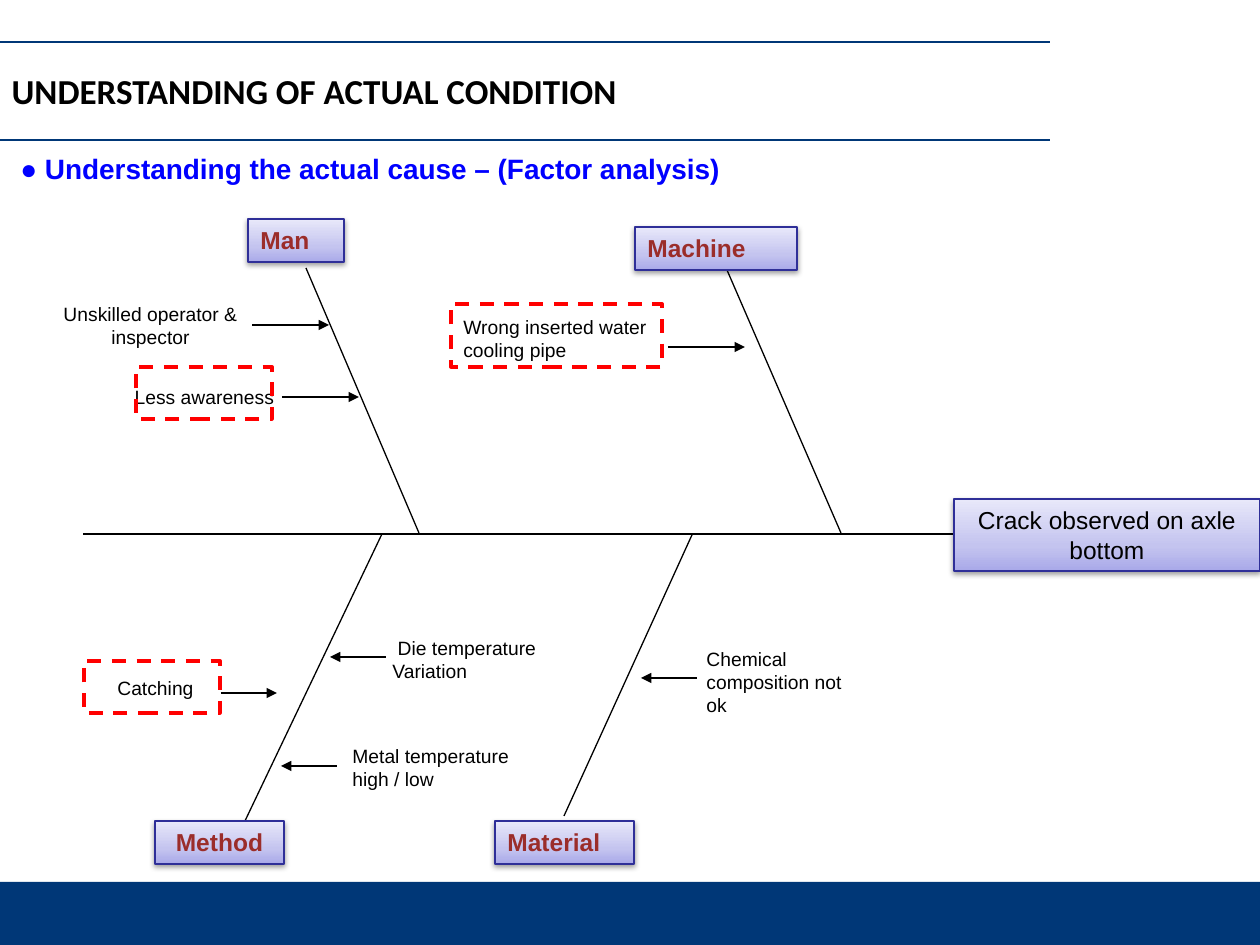
from lxml import etree
from pptx import Presentation, util as u
from pptx.dml.color import RGBColor
from pptx.enum import dml, shapes, text
from pptx.oxml import parse_xml
from pptx.oxml.ns import nsdecls, qn

PX = 914400 / 126
NAVY = RGBColor(0x00, 0x37, 0x77)
BLACK = RGBColor(0x00, 0x00, 0x00)
BLUE = RGBColor(0x00, 0x00, 0xFF)
RED = RGBColor(0xFF, 0x00, 0x00)
MAROON = RGBColor(0x9B, 0x2D, 0x2A)
INDIGO = RGBColor(0x2F, 0x2F, 0x98)
LILACS = (
    (0, RGBColor(0xA9, 0xA9, 0xE9)),
    (35, RGBColor(0xC4, 0xC4, 0xEF)),
    (100, RGBColor(0xE8, 0xE8, 0xFA)),
)
LEFT, CENTER = text.PP_ALIGN.LEFT, text.PP_ALIGN.CENTER
TOP, MIDDLE = text.MSO_ANCHOR.TOP, text.MSO_ANCHOR.MIDDLE

CATEGORIES = (
    ("Man", (248, 219, 96, 43), LEFT),
    ("Method", (155, 821, 129, 43), CENTER),
    ("Material", (495, 821, 139, 43), LEFT),
    ("Machine", (635, 227, 162, 43), LEFT),
)
BONES = (
    (987, 534, 83, 534),
    (727, 270, 841, 533),
    (306, 268, 419, 533),
    (564, 816, 692, 535),
    (245, 821, 382, 534),
)
CAUSES = (
    ("Unskilled operator & inspector", (42, 294, 217, 63), CENTER),
    ("Less awareness", (96, 382, 217, 29), CENTER),
    ("Chemical composition not ok", (694, 649, 185, 66), LEFT),
    ("Metal temperature high / low", (340, 752, 185, 31), LEFT),
    ("Wrong inserted water cooling pipe", (451, 315, 217, 47), LEFT),
    ("Catching", (105, 672, 126, 31), LEFT),
    (" Die temperature Variation", (380, 641, 208, 37), LEFT),
)
ARROWS = (
    (252, 325, 77),
    (282, 397, 77),
    (668, 347, 77),
    (221, 693, 56),
    (386, 657, -56),
    (337, 766, -56),
    (697, 678, -56),
)
KEY_CAUSES = ((84, 661, 136, 52), (136, 367, 136, 52), (451, 304, 211, 63))


def emu(lengths):
    return [u.Emu(round(length * PX)) for length in lengths]


def write(frame, words, size, color, bold=False, align=LEFT, anchor=MIDDLE, font="Arial"):
    frame.word_wrap = True
    frame.auto_size = text.MSO_AUTO_SIZE.NONE
    frame.vertical_anchor = anchor
    paragraph = frame.paragraphs[0]
    paragraph.alignment = align
    run = paragraph.add_run()
    run.text = words
    run.font.name = font
    run.font.size = u.Pt(size)
    run.font.bold = bold
    run.font.color.rgb = color


def add_title(slide, words):
    title = slide.shapes.title
    title.left, title.top, title.width, title.height = emu((-1, 66, 709, 50))
    write(title.text_frame, words, 20, BLACK, bold=True, font="Calibri")


def add_label(slide, words, box, size=11, color=BLACK, bold=False, align=LEFT):
    label = slide.shapes.add_textbox(*emu(box))
    write(label.text_frame, words, size, color, bold, align)


def add_line(slide, ends, color=BLACK, arrow=False):
    line = slide.shapes.add_connector(shapes.MSO_CONNECTOR.STRAIGHT, *emu(ends))
    line.line.color.rgb = color
    line.line.width = u.Pt(0.75)
    properties = line._element.spPr
    if arrow:
        etree.SubElement(properties.find(qn("a:ln")), qn("a:tailEnd"), type="triangle")
    etree.SubElement(properties, qn("a:effectLst"))


def add_rectangle(slide, box):
    rectangle = slide.shapes.add_shape(shapes.MSO_SHAPE.RECTANGLE, *emu(box))
    rectangle.shadow.inherit = False
    return rectangle


def add_band(slide, box):
    band = add_rectangle(slide, box)
    band.fill.solid()
    band.fill.fore_color.rgb = NAVY
    band.line.fill.background()


def add_key_frame(slide, box):
    frame = add_rectangle(slide, box)
    frame.fill.background()
    frame.line.color.rgb = RED
    frame.line.width = u.Pt(2)
    frame.line.dash_style = dml.MSO_LINE.DASH


def add_shaded_box(slide, words, box, color, bold, align):
    shaded = add_rectangle(slide, box)
    shaded.line.color.rgb = INDIGO
    shaded.line.width = u.Pt(0.75)
    stops = "".join(
        f'<a:gs pos="{position * 1000}"><a:srgbClr val="{lilac}"/></a:gs>'
        for position, lilac in LILACS
    )
    properties = shaded._element.spPr
    properties.find(qn("a:prstGeom")).addnext(parse_xml(
        f'<a:gradFill {nsdecls("a")} rotWithShape="1"><a:gsLst>{stops}</a:gsLst>'
        '<a:lin ang="16200000" scaled="0"/></a:gradFill>'
    ))
    properties.find(qn("a:effectLst")).append(parse_xml(
        f'<a:outerShdw {nsdecls("a")} blurRad="40000" dist="20000" dir="5400000" '
        'rotWithShape="0"><a:srgbClr val="000000"><a:alpha val="38000"/></a:srgbClr>'
        '</a:outerShdw>'
    ))
    write(shaded.text_frame, words, 14, color, bold, align, TOP)
    shaded.text_frame.auto_size = text.MSO_AUTO_SIZE.SHAPE_TO_FIT_TEXT


def main():
    deck = Presentation()
    deck.slide_width, deck.slide_height = emu((1260, 945))
    slide = deck.slides.add_slide(deck.slide_layouts[5])

    add_band(slide, (0, 882, 1260, 63))
    for rule_y in (42, 140):
        add_line(slide, (0, rule_y, 1050, rule_y), NAVY)
    add_title(slide, "UNDERSTANDING OF ACTUAL CONDITION")
    add_label(slide, "● Understanding the actual cause – (Factor analysis)",
              (8, 149, 811, 39), 16, BLUE, bold=True)

    for bone in BONES:
        add_line(slide, bone)
    for category, box, align in CATEGORIES:
        add_shaded_box(slide, category, box, MAROON, True, align)
    add_shaded_box(slide, "Crack observed on axle bottom", (954, 499, 306, 72),
                   BLACK, False, CENTER)

    for cause, box, align in CAUSES:
        add_label(slide, cause, box, align=align)
    for x, y, reach in ARROWS:
        add_line(slide, (x, y, x + reach, y), arrow=True)
    for box in KEY_CAUSES:
        add_key_frame(slide, box)

    deck.save("out.pptx")


if __name__ == "__main__":
    main()
